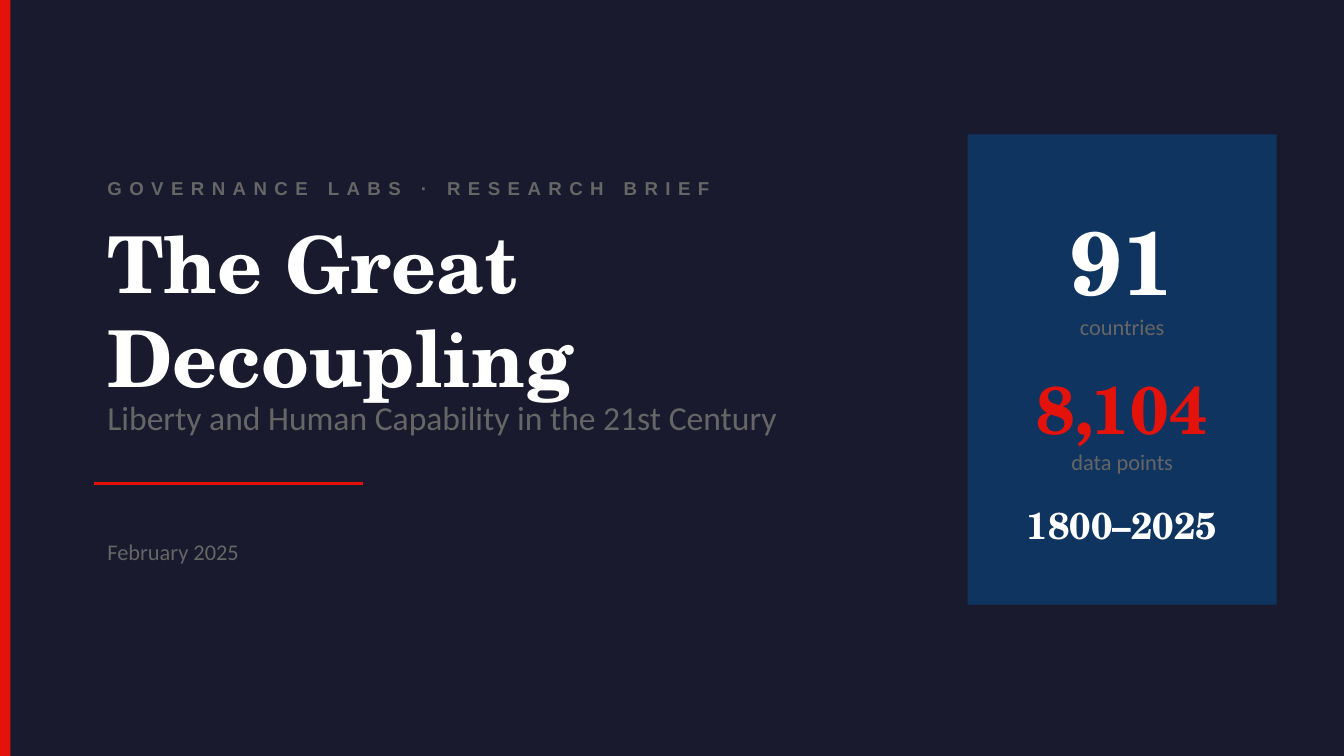
from typing import NamedTuple

from pptx import Presentation
from pptx import util as u
from pptx.dml.color import RGBColor
from pptx.enum import shapes, text
from pptx.oxml.ns import qn

NAVY, BLUE, RED = "1A1A2E", "0F3460", "E3120B"
GREY, WHITE = "666666", "FFFFFF"
SERIF, SANS = "TeX Gyre Schola", "Calibri"
WIDTH, HEIGHT = 25.4, 14.29
MARGIN = 1.78
PANEL_LEFT, PANEL_WIDTH = 18.29, 5.84


class Box(NamedTuple):
    """Position and size in centimetres."""
    left: float
    top: float
    width: float
    height: float

    def lengths(self) -> list:
        return [u.Cm(value) for value in self]


class Statistic(NamedTuple):
    value: str
    size: float
    color: str
    label: str = ""


def set_color(color_format, value: str) -> None:
    color_format.rgb = RGBColor.from_string(value)


def add_rectangle(slide, box: Box, color: str) -> None:
    shape = slide.shapes.add_shape(shapes.MSO_SHAPE.RECTANGLE, *box.lengths())
    shape.shadow.inherit = False
    shape.fill.solid()
    set_color(shape.fill.fore_color, color)
    shape.line.fill.background()


def add_rule(slide, left: float, top: float, length: float) -> None:
    rule = slide.shapes.add_connector(
        shapes.MSO_CONNECTOR.STRAIGHT,
        u.Cm(left), u.Cm(top), u.Cm(left + length), u.Cm(top))
    set_color(rule.line.color, RED)
    rule.line.width = u.Pt(2)
    properties = rule._element.spPr
    properties.append(properties.makeelement(qn("a:effectLst"), {}))


def add_text_frame(slide, box: Box):
    frame = slide.shapes.add_textbox(*box.lengths()).text_frame
    frame.word_wrap = True
    frame.vertical_anchor = text.MSO_ANCHOR.MIDDLE
    return frame


def write(paragraph, content: str, *, size: float, font: str = SANS,
          color: str = GREY, bold: bool = False, spacing: float = 0,
          before: float = 0, align=text.PP_ALIGN.LEFT) -> None:
    """Fill a paragraph with one formatted run; spacing is in points."""
    paragraph.alignment = align
    if before:
        paragraph.space_before = u.Pt(before)
    run = paragraph.add_run()
    run.text = content
    run.font.size = u.Pt(size)
    run.font.name = font
    run.font.bold = bold
    set_color(run.font.color, color)
    if spacing:
        run.font._element.set("spc", str(int(spacing * 100)))


def add_text(slide, box: Box, content: str, **style) -> None:
    write(add_text_frame(slide, box).paragraphs[0], content, **style)


def add_statistics(slide, box: Box, statistics: list[Statistic]) -> None:
    frame = add_text_frame(slide, box)
    for index, item in enumerate(statistics):
        paragraph = frame.add_paragraph() if index else frame.paragraphs[0]
        write(paragraph, item.value, size=item.size, font=SERIF, bold=True,
              color=item.color, before=14.5 if index else 0,
              align=text.PP_ALIGN.CENTER)
        if item.label:
            write(frame.add_paragraph(), item.label, size=12,
                  align=text.PP_ALIGN.CENTER)


def main() -> None:
    presentation = Presentation()
    presentation.slide_width = u.Cm(WIDTH)
    presentation.slide_height = u.Cm(HEIGHT)
    slide = presentation.slides.add_slide(presentation.slide_layouts[6])
    slide.background.fill.solid()
    set_color(slide.background.fill.fore_color, NAVY)

    add_rectangle(slide, Box(0, 0, 0.2, HEIGHT), RED)
    add_text(slide, Box(MARGIN, 3.05, 20.32, 1.02),
             "GOVERNANCE LABS · RESEARCH BRIEF",
             size=10, font="Arial", bold=True, spacing=4)
    add_text(slide, Box(MARGIN, 4.32, 15.75, 3.05), "The Great Decoupling",
             size=42, font=SERIF, color=WHITE, bold=True)
    add_text(slide, Box(MARGIN, 7.24, 20.32, 1.27),
             "Liberty and Human Capability in the 21st Century", size=18)
    add_rule(slide, MARGIN, 9.14, 5.08)
    add_text(slide, Box(MARGIN, 9.91, 10.16, 1.02), "February 2025", size=12)

    add_rectangle(slide, Box(PANEL_LEFT, 2.54, PANEL_WIDTH, 8.89), BLUE)
    add_statistics(slide, Box(PANEL_LEFT, 2.79, PANEL_WIDTH, 8.64), [
        Statistic("91", 48, WHITE, "countries"),
        Statistic("8,104", 36, RED, "data points"),
        Statistic("1800–2025", 20, WHITE),
    ])
    presentation.save("out.pptx")


if __name__ == "__main__":
    main()
